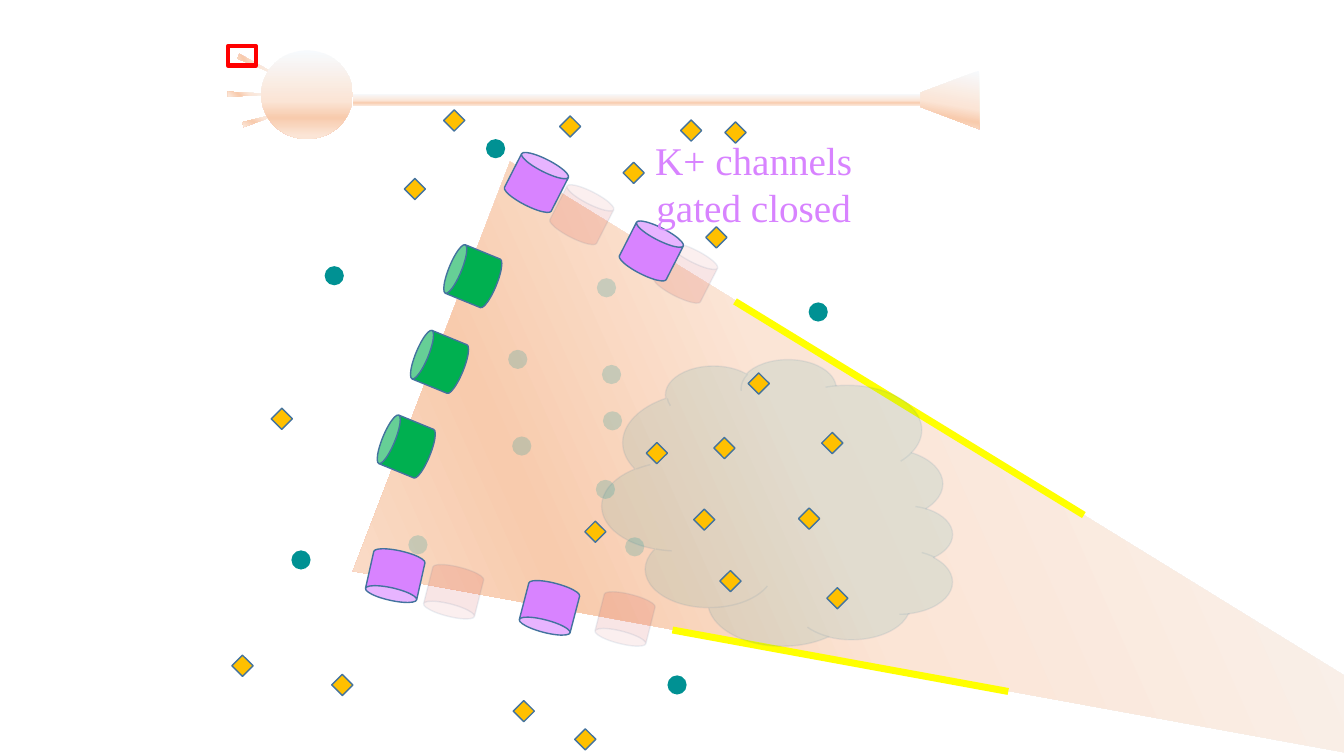
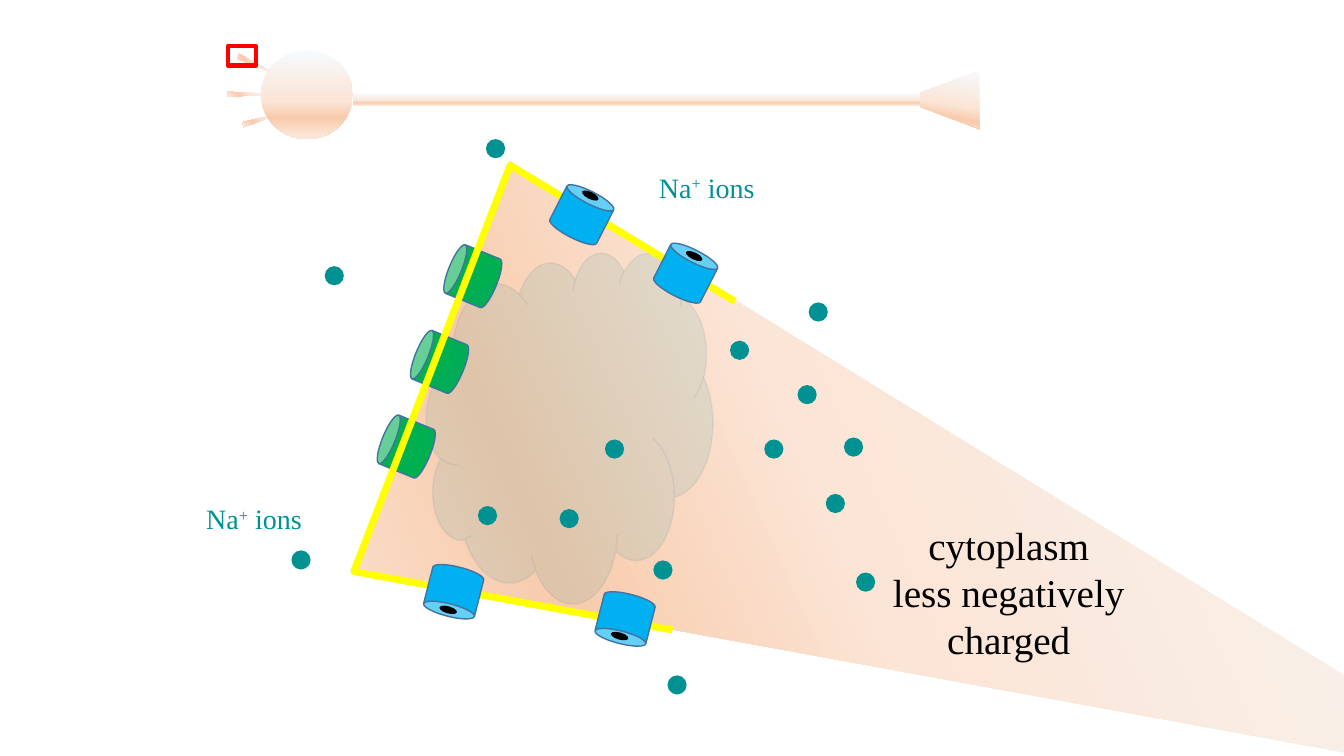
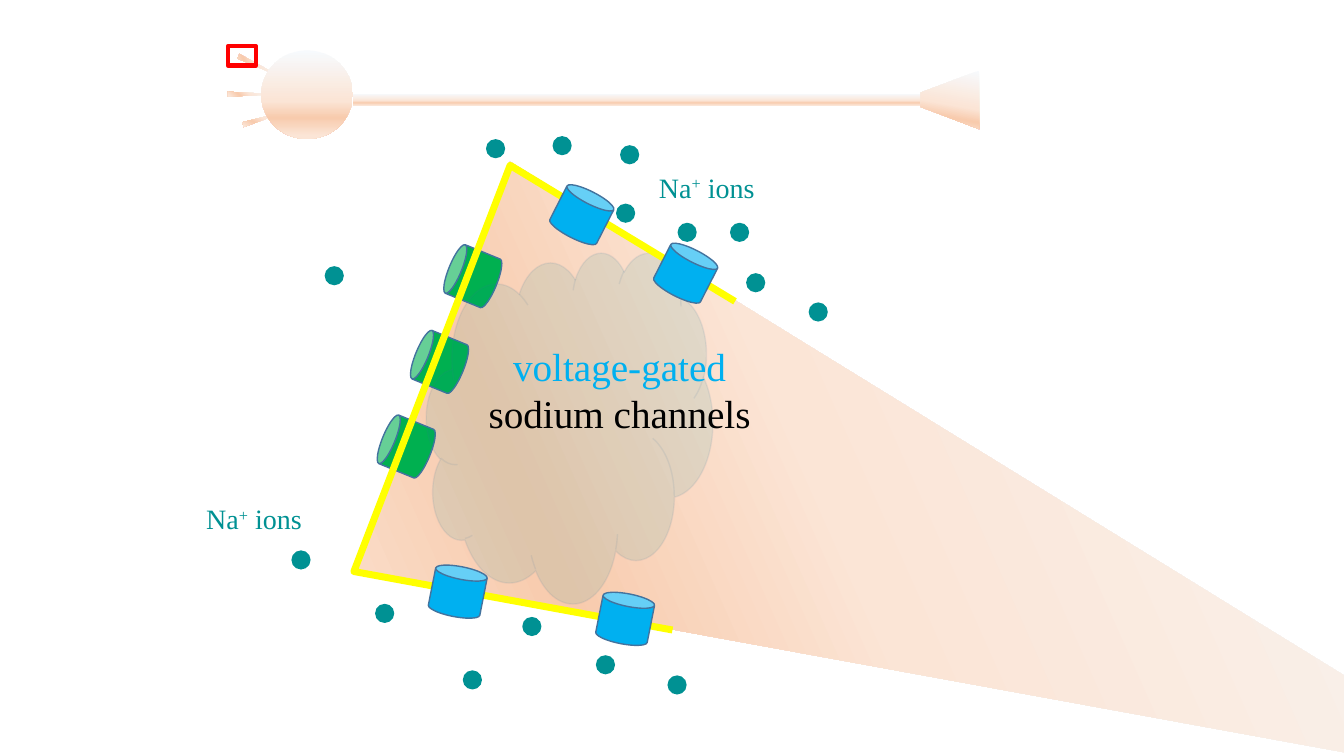
from dataclasses import dataclass
from typing import NamedTuple, Optional

import lxml.etree
import pptx
import pptx.dml.color
import pptx.enum.shapes
import pptx.enum.text
import pptx.oxml.ns
import pptx.util

RGB = pptx.dml.color.RGBColor
SHAPE = pptx.enum.shapes.MSO_SHAPE
qn = pptx.oxml.ns.qn

# Scale: 100 px to the inch
PX = 9144
FONT = "Times New Roman"

# Colours
TEAL = RGB(0x00, 0x91, 0x93)
GREEN = RGB(0x00, 0xB0, 0x50)
BLUE = RGB(0x00, 0xB0, 0xF0)
PURPLE = RGB(0xD8, 0x83, 0xFF)
GOLD = RGB(0xFF, 0xC0, 0x00)
DARK_RED = RGB(0xC0, 0x00, 0x00)
RED = RGB(0xFF, 0x00, 0x00)
YELLOW = RGB(0xFF, 0xFF, 0x00)
BLACK = RGB(0x00, 0x00, 0x00)
OUTLINE = RGB(0x43, 0x73, 0x9E)
PALE = RGB(0xF7, 0xFA, 0xFD)
PEACH = RGB(0xFB, 0xE5, 0xD6)
DEEP_PEACH = RGB(0xF8, 0xCB, 0xAD)
CELL_STOPS = ((0, PALE), (57, PEACH), (76, DEEP_PEACH), (96, PEACH))


@dataclass(frozen=True)
class Kind:
    """A repeated object: its shape, size and look; opacity in percent."""
    shape: SHAPE
    w: int
    h: int
    fill: Optional[RGB]
    line: Optional[RGB] = None
    line_pt: float = 1
    opacity: int = 100


class Spot(NamedTuple):
    x: int
    y: int
    rot: float = 0


class CellPart(NamedTuple):
    shape: SHAPE
    x: int
    y: int
    w: int
    h: int
    rot: float
    angle: int


class Run(NamedTuple):
    text: str
    color: RGB
    superscript: bool = False


def can(fill: RGB, opacity: int = 100) -> Kind:
    return Kind(SHAPE.CAN, 52, 50, fill, OUTLINE, opacity=opacity)


# Kinds
SODIUM = Kind(SHAPE.OVAL, 19, 19, TEAL)
FAINT_SODIUM = Kind(SHAPE.OVAL, 19, 19, TEAL, opacity=20)
POTASSIUM = Kind(SHAPE.DIAMOND, 21, 21, GOLD, OUTLINE)
PORE = Kind(SHAPE.OVAL, 7, 18, BLACK)
CLOUD = Kind(SHAPE.CLOUD, 284, 348, TEAL, OUTLINE, opacity=10)
ZOOM_FRAME = Kind(SHAPE.RECTANGLE, 28, 19, None, RED, 3)
LIGAND_CHANNEL = can(GREEN)
SODIUM_CHANNEL = can(BLUE)
INACTIVE_CHANNEL = can(DARK_RED, 10)
POTASSIUM_CHANNEL = can(PURPLE)

# The enlarged dendrite, then the small neuron
CELL = (
    CellPart(SHAPE.ISOSCELES_TRIANGLE, 751, -8, 435, 1158, 111, 45),
    CellPart(SHAPE.ISOSCELES_TRIANGLE, 256, 42, 5, 49, 116, 45),
    CellPart(SHAPE.ISOSCELES_TRIANGLE, 248, 69, 5, 49, 90, 45),
    CellPart(SHAPE.ISOSCELES_TRIANGLE, 262, 92, 5, 49, 73, 45),
    CellPart(SHAPE.OVAL, 259, 50, 91, 88, 0, 90),
    CellPart(SHAPE.RECTANGLE, 350, 93, 564, 12, 0, 90),
    CellPart(SHAPE.TRAPEZOID, 913, 70, 58, 58, 270, 190),
)

# Places shared by slides
OUTER_SODIUM = [Spot(322, 264), Spot(482, 138), Spot(289, 546),
                Spot(662, 670), Spot(802, 300)]
LIGAND_SPOTS = [Spot(377 + 33 * i, 418 - 169 * i // 2, 292.3) for i in range(3)]
UPPER_SPOTS = [Spot(551, 188, 27), Spot(654, 246, 27)]
LOWER_SPOTS = [Spot(594, 589, 194.2), Spot(424, 562, 194.2)]
MEMBRANE = ((729, 299), (506, 164), (351, 567), (667, 625))


def place(s, kind: Kind, *spots: Spot) -> None:
    """Draw one object of a kind at each spot."""
    for spot in spots:
        sp = s.shapes.add_shape(kind.shape, spot.x * PX, spot.y * PX,
                                kind.w * PX, kind.h * PX)
        sp.rotation = spot.rot
        sp.shadow.inherit = False
        if kind.fill is None:
            sp.fill.background()
        else:
            sp.fill.solid()
            sp.fill.fore_color.rgb = kind.fill
        if kind.line is None:
            sp.line.fill.background()
        else:
            sp.line.color.rgb = kind.line
            sp.line.width = pptx.util.Pt(kind.line_pt)
        if kind.opacity < 100:
            for color in sp._element.spPr.iter(qn("a:srgbClr")):
                lxml.etree.SubElement(color, qn("a:alpha"), val=str(kind.opacity * 1000))


def draw_cell_part(s, part: CellPart) -> None:
    sp = s.shapes.add_shape(part.shape, part.x * PX, part.y * PX, part.w * PX, part.h * PX)
    sp.rotation = part.rot
    sp.shadow.inherit = False
    sp.line.fill.background()
    if part.shape == SHAPE.TRAPEZOID:
        sp.adjustments[0] = 0.377
    sp.fill.gradient()
    sp.fill.gradient_angle = 360 - part.angle
    stops = sp._element.spPr.find(".//" + qn("a:gsLst"))
    for old in list(stops):
        stops.remove(old)
    for percent, color in CELL_STOPS:
        stop = lxml.etree.SubElement(stops, qn("a:gs"), pos=str(percent * 1000))
        lxml.etree.SubElement(stop, qn("a:srgbClr"), val=str(color))


def add_text(s, x: int, y: int, w: int, h: int, size: int, *lines: tuple[Run, ...]) -> None:
    """Centred text, one paragraph for each line."""
    tf = s.shapes.add_textbox(x * PX, y * PX, w * PX, h * PX).text_frame
    tf.word_wrap = True
    tf.auto_size = pptx.enum.text.MSO_AUTO_SIZE.SHAPE_TO_FIT_TEXT
    for i, line in enumerate(lines):
        p = tf.add_paragraph() if i else tf.paragraphs[0]
        p.alignment = pptx.enum.text.PP_ALIGN.CENTER
        for run in line:
            r = p.add_run()
            r.text = run.text
            r.font.size = pptx.util.Pt(size)
            r.font.name = FONT
            r.font.color.rgb = run.color
            if run.superscript:
                r._r.get_or_add_rPr().set("baseline", "30000")


def add_signal_line(s, x1: int, y1: int, x2: int, y2: int) -> None:
    line = s.shapes.add_connector(pptx.enum.shapes.MSO_CONNECTOR.STRAIGHT,
                                  x1 * PX, y1 * PX, x2 * PX, y2 * PX)
    line.line.color.rgb = YELLOW
    line.line.width = pptx.util.Pt(5)
    lxml.etree.SubElement(line._element.spPr, qn("a:effectLst"))


def draw_membrane(s) -> None:
    builder = s.shapes.build_freeform(*MEMBRANE[0], scale=PX)
    builder.add_line_segments(MEMBRANE[1:], close=False)
    sp = builder.convert_to_shape()
    sp.shadow.inherit = False
    sp.fill.background()
    sp.line.color.rgb = YELLOW
    sp.line.width = pptx.util.Pt(5)


def add_cell_slide(prs):
    """A slide with the neuron, the dendrite and the outer sodium ions."""
    s = prs.slides.add_slide(prs.slide_layouts[6])
    for part in CELL:
        draw_cell_part(s, part)
    place(s, ZOOM_FRAME, Spot(226, 46))
    place(s, SODIUM, *OUTER_SODIUM)
    place(s, LIGAND_CHANNEL, *LIGAND_SPOTS)
    return s


def add_depolarized_slide(prs):
    """A cell slide with sodium labels, cytoplasm cloud and active membrane."""
    s = add_cell_slide(prs)
    for x, y in ((638, 164), (189, 493)):
        add_text(s, x, y, 126, 44, 20,
                 (Run("Na", TEAL), Run("+", TEAL, True), Run(" ions", TEAL)))
    place(s, CLOUD, Spot(423, 250))
    draw_membrane(s)
    place(s, SODIUM_CHANNEL, *UPPER_SPOTS)
    return s


def build_potassium_slide(prs) -> None:
    s = add_cell_slide(prs)
    place(s, INACTIVE_CHANNEL, *UPPER_SPOTS, *LOWER_SPOTS)
    add_signal_line(s, 667, 625, 1000, 686)
    add_signal_line(s, 729, 299, 1075, 511)
    place(s, POTASSIUM_CHANNEL, Spot(506, 156, 27), Spot(620, 224, 27),
          Spot(366, 546, 192.6), Spot(519, 578, 194.6))
    place(s, CLOUD, Spot(630, 325, 90))
    # Potassium ions inside, then outside
    place(s, POTASSIUM, Spot(641, 439), Spot(580, 517), Spot(714, 566),
          Spot(792, 504), Spot(708, 434), Spot(742, 370), Spot(688, 505),
          Spot(820, 583), Spot(815, 429))
    place(s, POTASSIUM, Spot(269, 405), Spot(230, 650), Spot(329, 669),
          Spot(509, 695), Spot(570, 723), Spot(700, 225), Spot(719, 121),
          Spot(618, 161), Spot(675, 119), Spot(555, 115), Spot(440, 109),
          Spot(401, 177))
    add_text(s, 577, 130, 341, 104, 28,
             (Run("K+ channels", PURPLE),), (Run("gated closed", PURPLE),))
    place(s, FAINT_SODIUM, Spot(620, 533), Spot(591, 476), Spot(405, 531),
          Spot(592, 276), Spot(508, 433), Spot(598, 408), Spot(597, 362),
          Spot(504, 347))


def build_inflow_slide(prs) -> None:
    s = add_depolarized_slide(prs)
    place(s, SODIUM_CHANNEL, *LOWER_SPOTS)
    place(s, PORE, Spot(582, 185, 116), Spot(685, 245, 116),
          Spot(611, 622, 106), Spot(441, 596, 106))
    add_text(s, 855, 512, 291, 151, 28, (Run("cytoplasm", BLACK),),
             (Run("less negatively", BLACK),), (Run("charged", BLACK),))
    place(s, SODIUM, Spot(791, 382), Spot(600, 436), Spot(555, 505),
          Spot(474, 502), Spot(849, 568), Spot(724, 338), Spot(758, 436),
          Spot(648, 556), Spot(837, 434), Spot(819, 490))


def build_gated_slide(prs) -> None:
    s = add_depolarized_slide(prs)
    place(s, SODIUM_CHANNEL, Spot(428, 562, 11.2), Spot(594, 589, 11.2))
    place(s, SODIUM, Spot(548, 135), Spot(372, 599), Spot(518, 612),
          Spot(459, 665), Spot(591, 650), Spot(615, 144), Spot(611, 202),
          Spot(724, 221), Spot(672, 221), Spot(740, 271))
    add_text(s, 469, 335, 291, 104, 28,
             (Run("voltage-gated", BLUE),), (Run("sodium channels", BLACK),))


def main() -> None:
    prs = pptx.Presentation()
    prs.slide_width = 1333 * PX
    prs.slide_height = 750 * PX
    build_potassium_slide(prs)
    build_inflow_slide(prs)
    build_gated_slide(prs)
    prs.save("out.pptx")


if __name__ == "__main__":
    main()
